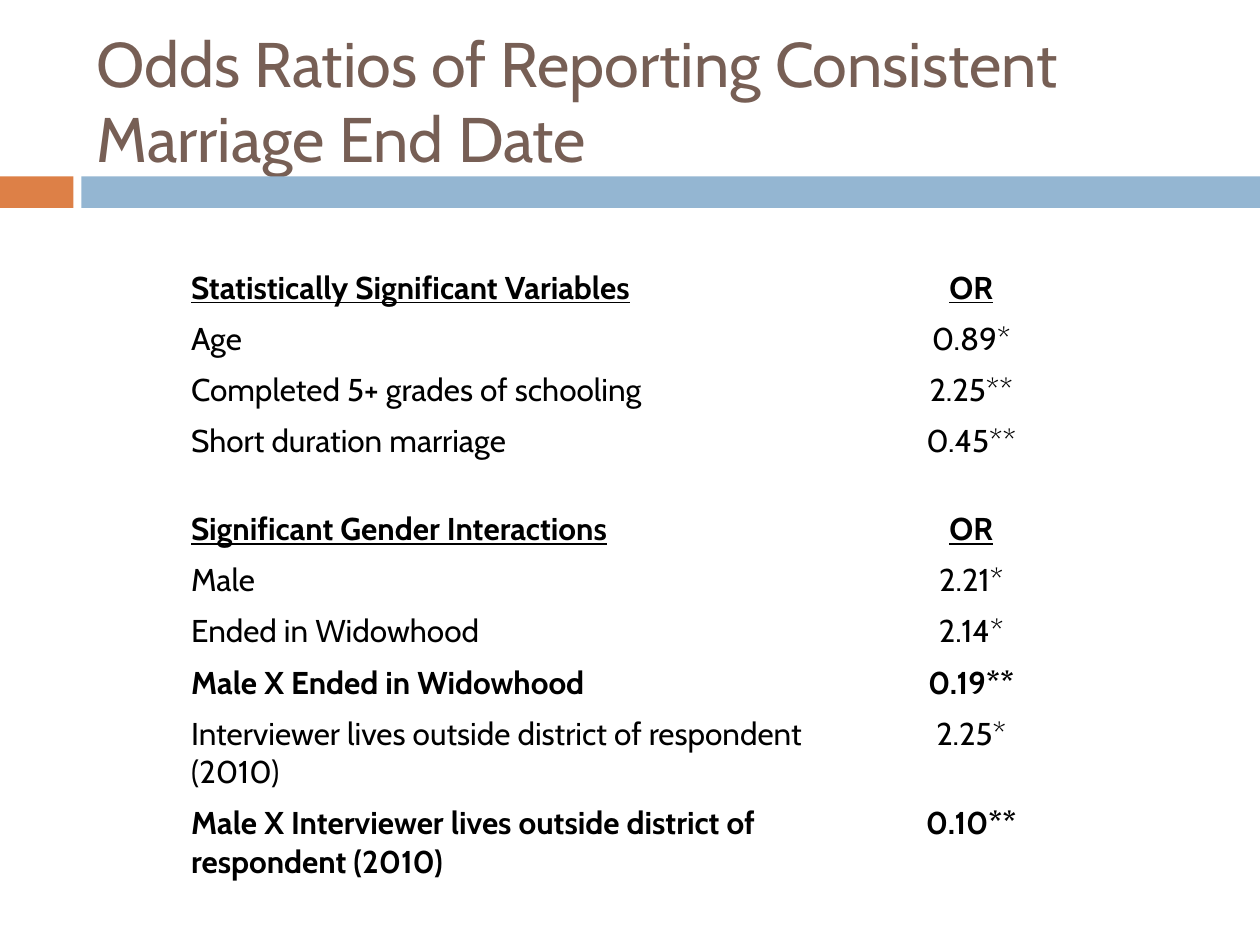
from pptx import Presentation
from pptx.dml.color import RGBColor
from pptx.enum.shapes import MSO_SHAPE as Shape
from pptx.enum.text import MSO_ANCHOR as Anchor, MSO_AUTO_SIZE as AutoSize, PP_ALIGN as Align
from pptx.util import Pt

BROWN = RGBColor(0x77, 0x5F, 0x55)
ORANGE = RGBColor(0xDD, 0x80, 0x47)
BLUE = RGBColor(0x94, 0xB6, 0xD2)
BLACK = RGBColor(0, 0, 0)

SLIDE_WIDTH, SLIDE_HEIGHT = 720, 540
ROW_HEIGHT, TALL_ROW_HEIGHT = 29.2, 50.4

# Each row: variable, odds ratio, bold
SIGNIFICANT_VARIABLES = [
    ("Age", "0.89*", False),
    ("Completed 5+ grades of schooling", "2.25**", False),
    ("Short duration marriage", "0.45**", False),
]
GENDER_INTERACTIONS = [
    ("Male", "2.21*", False),
    ("Ended in Widowhood", "2.14*", False),
    ("Male X Ended in Widowhood", "0.19**", True),
    ("Interviewer lives outside district of respondent (2010)", "2.25*", False),
    ("Male X Interviewer lives outside district of respondent (2010)", "0.10**", True),
]


def write_text(frame, text, *, font="Cabin", size=18, color=BLACK,
               bold=False, underline=False, align=Align.LEFT):
    paragraph = frame.paragraphs[0]
    paragraph.alignment = align
    run = paragraph.add_run()
    run.text = text
    run.font.name = font
    run.font.size = Pt(size)
    run.font.color.rgb = color
    run.font.bold = bold
    run.font.underline = underline


class SlideBuilder:
    """Holds the style and the current slide."""

    title_size = 36
    title_color = BROWN
    column_widths = (366, 174)
    column_aligns = (Align.LEFT, Align.CENTER)

    def __init__(self, slide):
        self.slide = slide

    def title(self, text, left, top, width, height):
        title = self.slide.shapes.title
        title.left, title.top = Pt(left), Pt(top)
        title.width, title.height = Pt(width), Pt(height)
        frame = title.text_frame
        frame.word_wrap = True
        frame.auto_size = AutoSize.NONE
        frame.vertical_anchor = Anchor.MIDDLE
        write_text(frame, text, size=self.title_size, color=self.title_color)

    def bar(self, left, top, width, height, color):
        shape = self.slide.shapes.add_shape(
            Shape.RECTANGLE, Pt(left), Pt(top), Pt(width), Pt(height))
        shape.shadow.inherit = False
        shape.fill.solid()
        shape.fill.fore_color.rgb = color
        shape.line.fill.background()

    def odds_table(self, heading, rows, left, top, tall_rows=0):
        short_rows = len(rows) + 1 - tall_rows
        heights = [ROW_HEIGHT] * short_rows + [TALL_ROW_HEIGHT] * tall_rows
        table = self.slide.shapes.add_table(
            len(heights), len(self.column_widths), Pt(left), Pt(top),
            Pt(sum(self.column_widths)), Pt(sum(heights))).table
        table.first_row = table.horz_banding = False
        for column, width in zip(table.columns, self.column_widths):
            column.width = Pt(width)

        lines = [(heading, "OR", True), *rows]
        for index, (name, ratio, bold) in enumerate(lines):
            table.rows[index].height = Pt(heights[index])
            for column, text in enumerate((name, ratio)):
                cell = table.cell(index, column)
                cell.fill.background()
                write_text(cell.text_frame, text, bold=bold, underline=index == 0,
                           align=self.column_aligns[column])


def main():
    presentation = Presentation()
    presentation.slide_width = Pt(SLIDE_WIDTH)
    presentation.slide_height = Pt(SLIDE_HEIGHT)
    title_only = presentation.slide_layouts[5]
    builder = SlideBuilder(presentation.slides.add_slide(title_only))

    # Band under the title
    builder.bar(0, 100.8, 42, 18, ORANGE)
    builder.bar(46.5, 100.8, SLIDE_WIDTH - 46.5, 18, BLUE)

    # Title
    builder.title("Odds Ratios of Reporting Consistent Marriage End Date",
                  48, 18, 642, 78)

    # Odds ratio tables
    builder.odds_table("Statistically Significant Variables",
                       SIGNIFICANT_VARIABLES, 102, 150)
    builder.odds_table("Significant Gender Interactions",
                       GENDER_INTERACTIONS, 102, 288, tall_rows=2)

    presentation.save("out.pptx")


if __name__ == "__main__":
    main()
